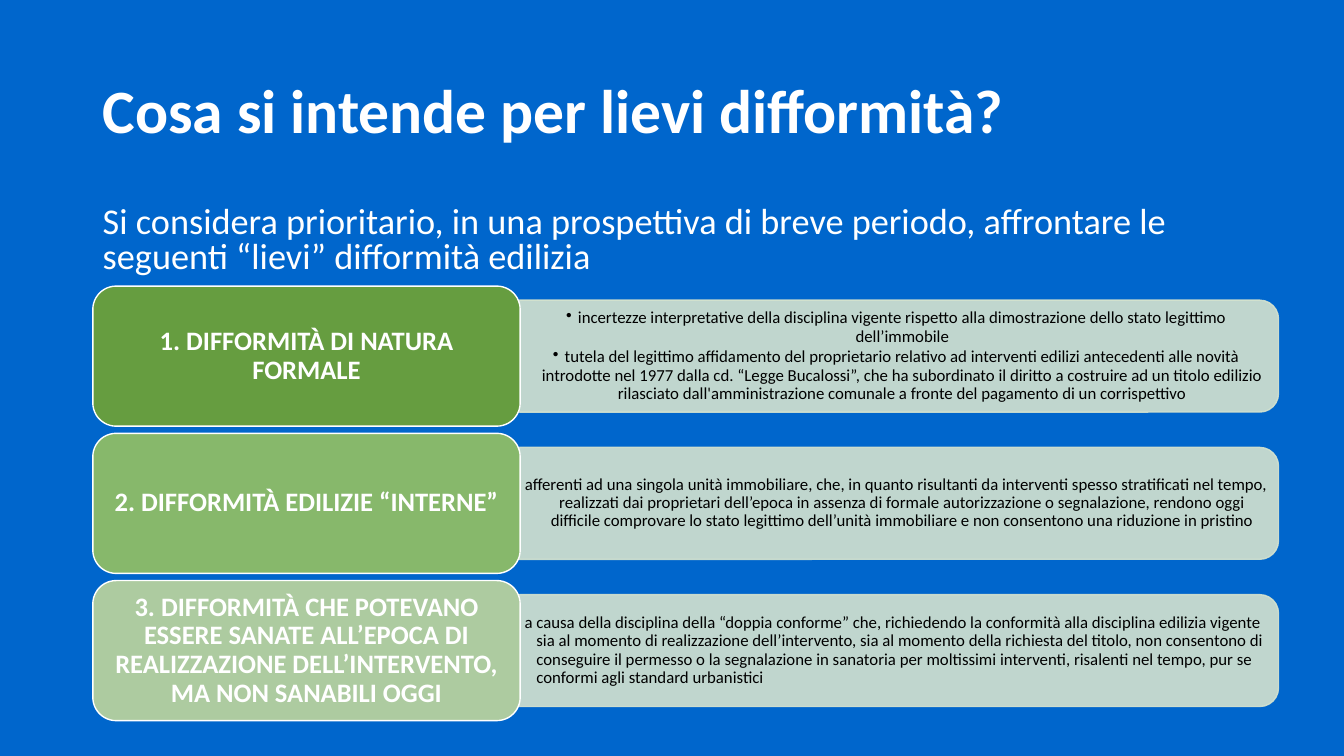
from lxml import etree
from pptx import Presentation
from pptx.dml import color
from pptx.enum import shapes, text
from pptx.oxml import ns
from pptx.util import Cm, Pt

FONT = "Calibri"
WHITE, BLACK, BLUE, PALE = "FFFFFF", "000000", "0066CC", "D5E3CF"
CENTER, LEFT = text.PP_ALIGN.CENTER, text.PP_ALIGN.LEFT
BOX_LEFT, BOX_TOP, BOX_W, BOX_H = 2.34, 7.21, 10.77, 3.53
PANEL_LEFT, PANEL_W, PANEL_H = 13.09, 19.13, 2.82
TEXT_W, TEXT_H = 19.0, 2.54
ROW_STEP = 3.71

ROWS = [
    ("1. DIFFORMITÀ DI NATURA FORMALE", "669D40", CENTER, True, [
        "incertezze interpretative della disciplina vigente rispetto alla dimostrazione "
        "dello stato legittimo dell’immobile",
        "tutela del legittimo affidamento del proprietario relativo ad interventi edilizi "
        "antecedenti alle novità introdotte nel 1977 dalla cd. “Legge Bucalossi”, che ha "
        "subordinato il diritto a costruire ad un titolo edilizio rilasciato "
        "dall'amministrazione comunale a fronte del pagamento di un corrispettivo",
    ]),
    ("2. DIFFORMITÀ EDILIZIE “INTERNE”", "87B86B", CENTER, False, [
        "afferenti ad una singola unità immobiliare, che, in quanto risultanti da interventi "
        "spesso stratificati nel tempo, realizzati dai proprietari dell’epoca in assenza di "
        "formale autorizzazione o segnalazione, rendono oggi difficile comprovare lo stato "
        "legittimo dell’unità immobiliare e non consentono una riduzione in pristino",
    ]),
    ("3. DIFFORMITÀ CHE POTEVANO ESSERE SANATE ALL’EPOCA DI REALIZZAZIONE "
     "DELL’INTERVENTO, MA NON SANABILI OGGI", "ADCBA0", LEFT, False, [
        "a causa della disciplina della “doppia conforme” che, richiedendo la conformità alla "
        "disciplina edilizia vigente sia al momento di realizzazione dell’intervento, sia al "
        "momento della richiesta del titolo, non consentono di conseguire il permesso o la "
        "segnalazione in sanatoria per moltissimi interventi, risalenti nel tempo, pur se "
        "conformi agli standard urbanistici",
    ]),
]


def paint(fmt, hex_color, alpha=None):
    fmt.solid()
    fmt.fore_color.rgb = color.RGBColor.from_string(hex_color)
    if alpha:
        for clr in fmt._xPr.iter(ns.qn("a:srgbClr")):
            etree.SubElement(clr, ns.qn("a:alpha"), val=str(alpha * 1000))


def hang(p, indent, bullet):
    pPr = p._p.get_or_add_pPr()
    pPr.set("marL", str(Cm(indent)))
    pPr.set("indent", str(-Cm(indent)))
    if bullet:
        etree.SubElement(pPr, ns.qn("a:buChar"), char="•")


def write(sp, paragraphs, size, fill=WHITE, bold=False, align=LEFT, spacing=0.9,
          before=0, after=0, indent=0, bullet=False, inset=(0.25, 0.13),
          anchor=text.MSO_ANCHOR.MIDDLE):
    tf = sp.text_frame
    tf.word_wrap = True
    tf.vertical_anchor = anchor
    tf.margin_left = tf.margin_right = Cm(inset[0])
    tf.margin_top = tf.margin_bottom = Cm(inset[1])
    for i, line in enumerate(paragraphs):
        p = tf.add_paragraph() if i else tf.paragraphs[0]
        p.alignment = align
        p.line_spacing = spacing
        p.space_before, p.space_after = Pt(before), Pt(after)
        if indent:
            hang(p, indent, bullet)
        r = p.add_run()
        r.text = line
        r.font.name, r.font.size, r.font.bold = FONT, Pt(size), bold
        paint(r.font.fill, fill)


def add_text(s, box, paragraphs, size, **fmt):
    write(s.shapes.add_textbox(*map(Cm, box)), paragraphs, size, **fmt)


def add_box(s, kind, box, fill, line, alpha=None):
    sp = s.shapes.add_shape(kind, *map(Cm, box))
    sp.shadow.inherit = False
    paint(sp.fill, fill, alpha)
    paint(sp.line.fill, line, alpha)
    sp.line.width = Pt(1)
    return sp


def add_row(s, top, label, fill, align, bullet, details):
    middle = top + BOX_H / 2
    center = PANEL_LEFT + PANEL_W / 2
    panel = add_box(s, shapes.MSO_SHAPE.ROUND_2_SAME_RECTANGLE,
                    (center - PANEL_H / 2, middle - PANEL_W / 2, PANEL_H, PANEL_W),
                    PALE, PALE, alpha=90)
    panel.rotation = 90
    add_text(s, (PANEL_LEFT, middle - TEXT_H / 2, TEXT_W, TEXT_H), details, 12,
             fill=BLACK, align=align, after=2, indent=0.3, bullet=bullet,
             inset=(0.13, 0.08))
    sp = add_box(s, shapes.MSO_SHAPE.ROUNDED_RECTANGLE,
                 (BOX_LEFT, top, BOX_W, BOX_H), fill, WHITE)
    write(sp, [label], 19, bold=True, align=CENTER, inset=(0.2, 0.1))


def main():
    prs = Presentation()
    prs.slide_width, prs.slide_height = Cm(33.87), Cm(19.05)
    s = prs.slides.add_slide(prs.slide_layouts[6])
    paint(s.background.fill, BLUE)
    add_text(s, (2.34, 1.02, 29.21, 3.68), ["Cosa si intende per lievi difformità?"],
             44, bold=True)
    add_text(s, (2.34, 5.08, 29.21, 2.16),
             ["Si considera prioritario, in una prospettiva di breve periodo, affrontare le "
              "seguenti “lievi” difformità edilizia"],
             25.9, spacing=0.8, before=10, anchor=text.MSO_ANCHOR.TOP)
    for i, row in enumerate(ROWS):
        add_row(s, BOX_TOP + i * ROW_STEP, *row)
    prs.save("out.pptx")


if __name__ == "__main__":
    main()
